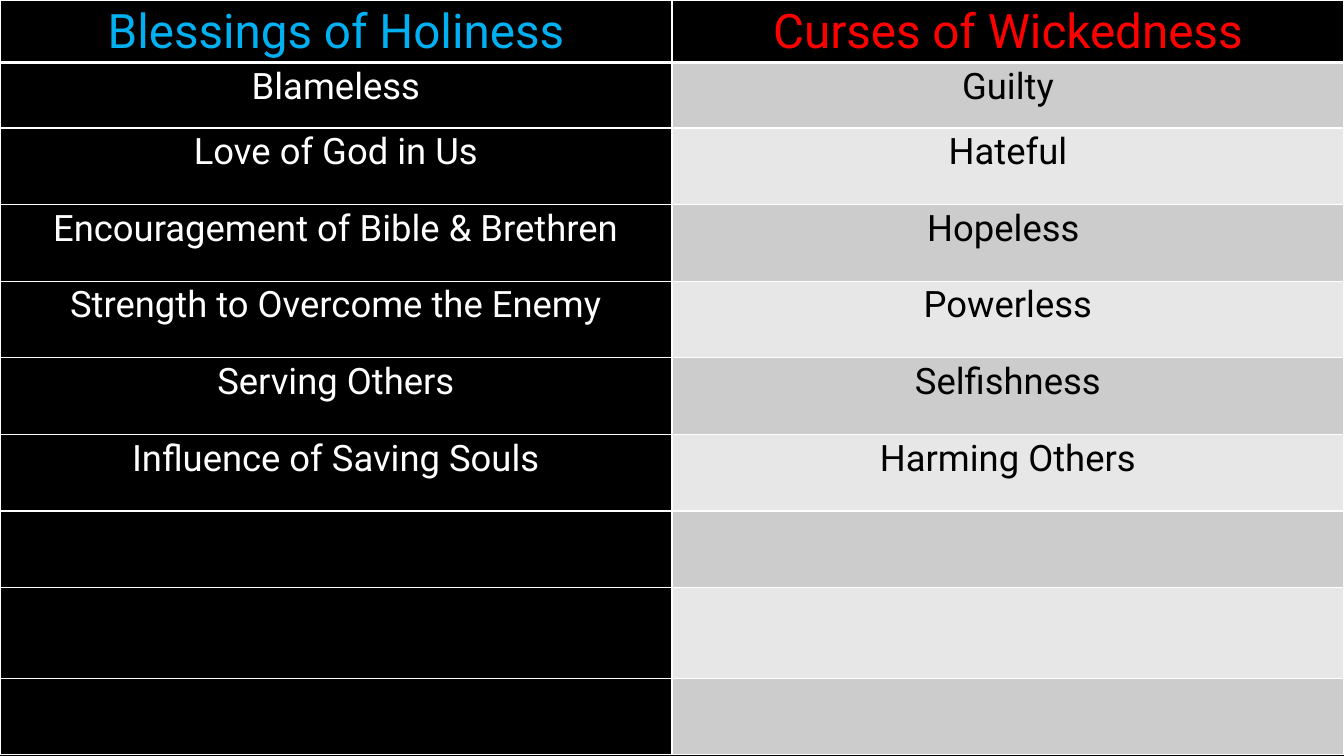
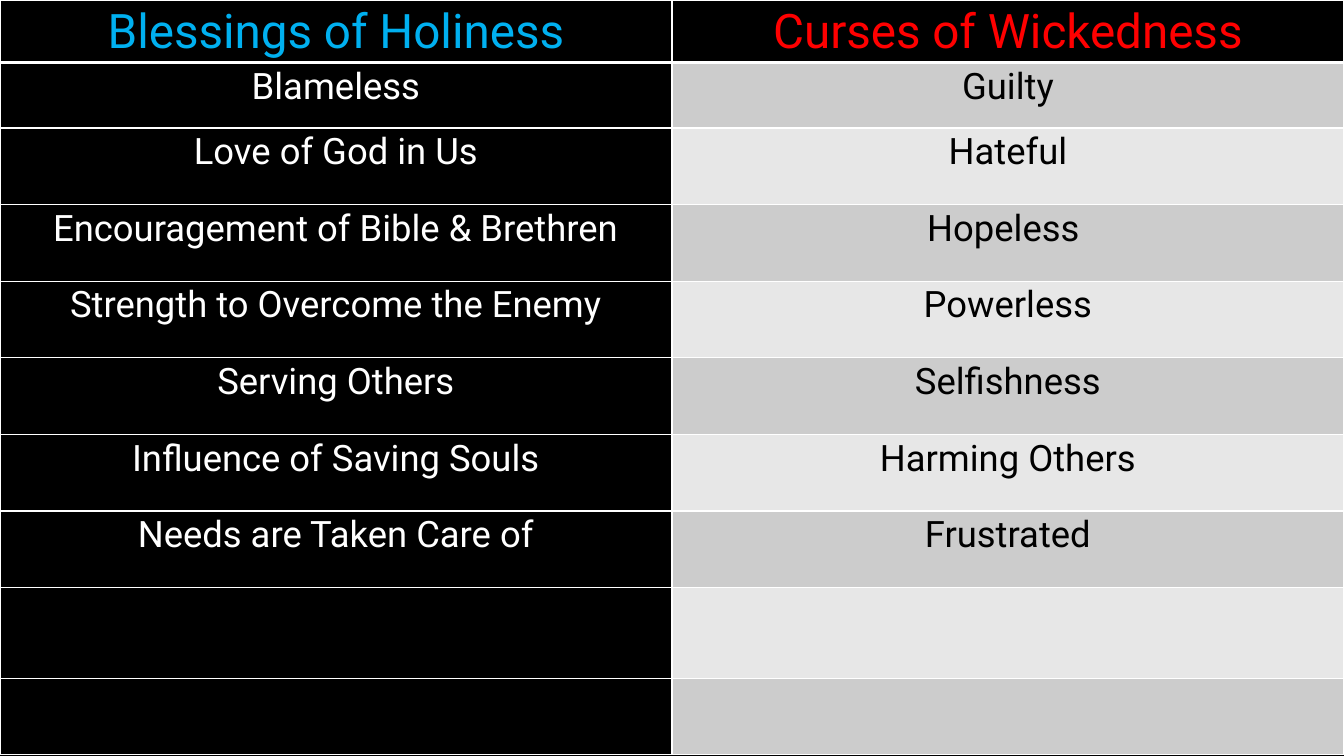
from dataclasses import dataclass
from lxml.etree import SubElement
from pptx import Presentation
from pptx.dml.color import RGBColor
from pptx.enum.text import PP_ALIGN
from pptx.oxml.ns import qn
from pptx.util import Inches, Pt


@dataclass(frozen=True)
class Theme:
    font: str = "Roboto"
    black: str = "000000"
    white: str = "FFFFFF"
    blessing: str = "00B0F0"
    curse: str = "FF0000"
    bands: tuple = ("CCCCCC", "E7E7E7")
    header_size: int = 34
    body_size: int = 26
    line_spacing: float = 1.07
    thin: int = 1
    thick: int = 3


theme = Theme()


def write_text(cell, text, size, color):
    paragraph = cell.text_frame.paragraphs[0]
    paragraph.alignment = PP_ALIGN.CENTER
    paragraph.line_spacing = theme.line_spacing
    run = paragraph.add_run()
    run.text = text
    run.font.name = theme.font
    run.font.size = Pt(size)
    run.font.color.rgb = RGBColor.from_string(color)


def style_cell(cell, fill, top, bottom):
    cell.margin_left = cell.margin_right = Inches(0.07)
    cell.margin_top = cell.margin_bottom = 0
    properties = cell._tc.get_or_add_tcPr()
    widths = {"a:lnL": theme.thin, "a:lnR": theme.thin, "a:lnT": top, "a:lnB": bottom}
    for tag, width in widths.items():
        line = SubElement(properties, qn(tag), w=str(Pt(width)))
        line_fill = SubElement(line, qn("a:solidFill"))
        SubElement(line_fill, qn("a:srgbClr"), val=theme.white)
    cell.fill.solid()
    cell.fill.fore_color.rgb = RGBColor.from_string(fill)


headers = ("Blessings of Holiness", "Curses of Wickedness")
pairs = [
    ("Blameless", "Guilty"),
    ("Love of God in Us", "Hateful"),
    ("Encouragement of Bible & Brethren", "Hopeless "),
    ("Strength to Overcome the Enemy", "Powerless"),
    ("Serving Others", "Selfishness"),
    ("Influence of Saving Souls", "Harming Others"),
    ("Needs are Taken Care of", "Frustrated"),
]
row_heights = [0.62, 0.65] + [0.76] * 6 + [0.9, 0.76]
pairs_shown = (6, 7)

presentation = Presentation()
presentation.slide_width = Inches(13.33)
presentation.slide_height = Inches(7.5)
background = presentation.slide_master.background.fill
background.solid()
background.fore_color.rgb = RGBColor.from_string(theme.black)

for shown in pairs_shown:
    slide = presentation.slides.add_slide(presentation.slide_layouts[6])
    table = slide.shapes.add_table(
        len(row_heights), len(headers), 0, 0,
        presentation.slide_width, Inches(sum(row_heights)),
    ).table
    texts = [headers] + pairs[:shown]

    for row_index, height in enumerate(row_heights):
        table.rows[row_index].height = Inches(height)
        is_header = row_index == 0
        top = theme.thick if row_index == 1 else theme.thin
        bottom = theme.thick if is_header else theme.thin
        if is_header:
            size = theme.header_size
            fills = (theme.black, theme.black)
            colors = (theme.blessing, theme.curse)
        else:
            size = theme.body_size
            fills = (theme.black, theme.bands[(row_index - 1) % 2])
            colors = (theme.white, theme.black)

        for column_index, fill in enumerate(fills):
            cell = table.cell(row_index, column_index)
            style_cell(cell, fill, top, bottom)
            if row_index < len(texts):
                write_text(cell, texts[row_index][column_index], size, colors[column_index])

presentation.save("out.pptx")
